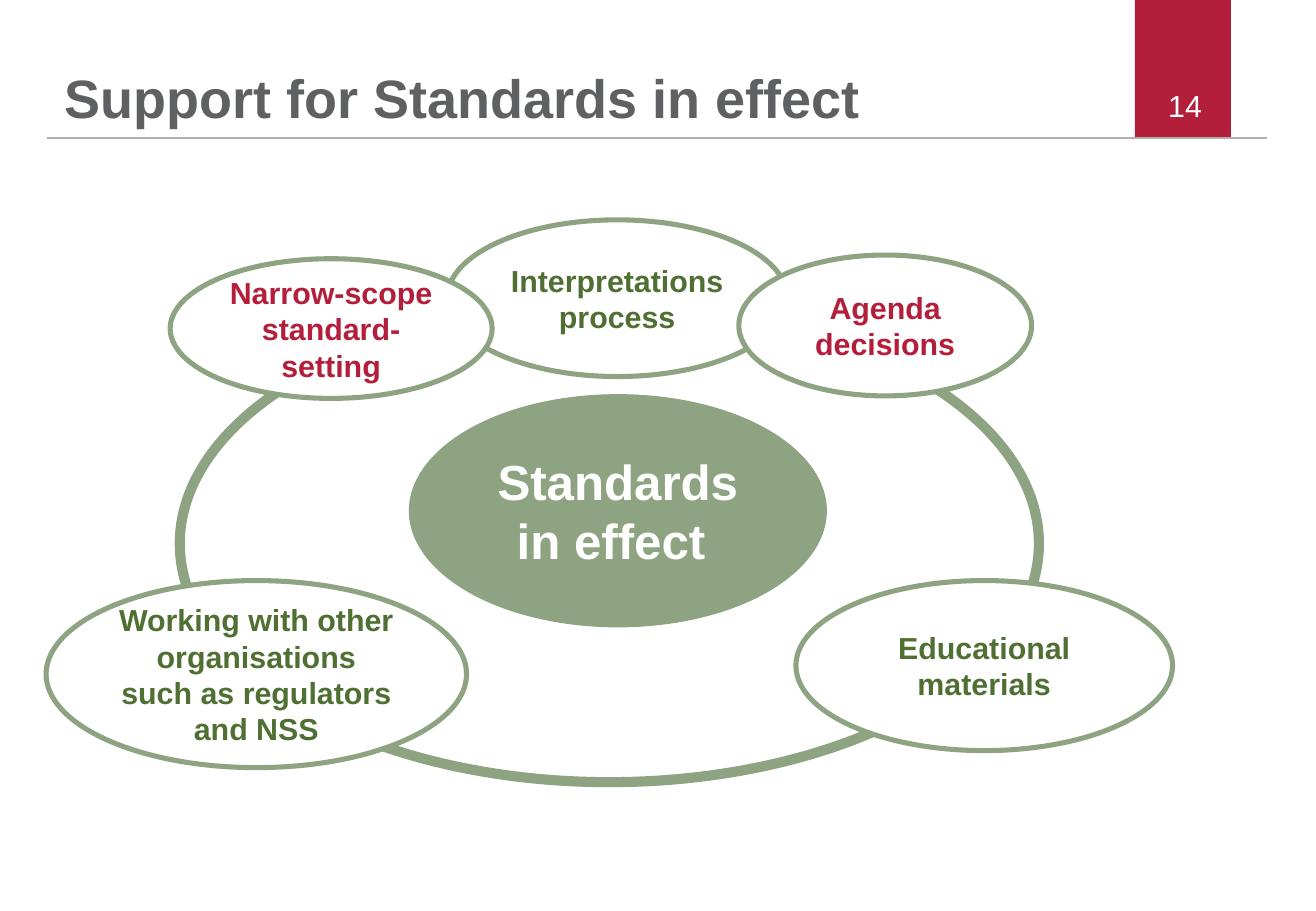
"""Build the slide on support for Standards in effect."""
import dataclasses

import pptx
import pptx.dml.color
import pptx.enum.shapes
import pptx.enum.text
import pptx.oxml
import pptx.util

Inches = pptx.util.Inches
Align = pptx.enum.text.PP_ALIGN
Anchor = pptx.enum.text.MSO_ANCHOR
Preset = pptx.enum.shapes.MSO_SHAPE


@dataclasses.dataclass(frozen=True)
class Theme:
    font: str = "Arial"
    red: str = "B31E3B"
    green: str = "4F7032"
    sage: str = "8DA381"
    white: str = "FFFFFF"
    grey: str = "5F6062"
    rule: str = "AFAFB0"
    title_size: float = 32
    centre_size: float = 29.2
    body_size: float = 18
    ring_width: float = 6
    outline_width: float = 3
    thin_width: float = 0.75
    rule_width: float = 1.2


THEME = Theme()

SUPPORT_ACTIVITIES = [
    ("Working with other organisations such as regulators and NSS",
     (0.38, 4.78, 3.46, 1.54), THEME.green),
    ("Educational materials", (6.55, 4.78, 3.1, 1.4), THEME.green),
    ("Interpretations process", (3.68, 1.81, 2.8, 1.29), THEME.green),
    ("Narrow-scope standard-setting", (1.4, 2.13, 2.65, 1.15), THEME.red),
    ("Agenda decisions", (6.08, 2.1, 2.41, 1.16), THEME.red),
]


def rgb(value):
    """Return a colour object for a hex value."""
    return pptx.dml.color.RGBColor.from_string(value)


def write_text(shape, text, size, color, bold=True, align=Align.CENTER,
               anchor=Anchor.MIDDLE, margins=(0.08, 0.04), line_spacing=None):
    """Put one formatted paragraph into a shape."""
    frame = shape.text_frame
    horizontal, vertical = map(Inches, margins)
    frame_format = {
        "word_wrap": True, "vertical_anchor": anchor,
        "margin_left": horizontal, "margin_right": horizontal,
        "margin_top": vertical, "margin_bottom": vertical,
    }
    for name, value in frame_format.items():
        setattr(frame, name, value)
    paragraph = frame.paragraphs[0]
    paragraph.alignment = align
    paragraph.line_spacing = line_spacing
    run = paragraph.add_run()
    run.text = text
    font_format = {"name": THEME.font, "size": pptx.util.Pt(size), "bold": bold}
    for name, value in font_format.items():
        setattr(run.font, name, value)
    run.font.color.rgb = rgb(color)


def add_label(shapes, box, text, size, color, **text_format):
    """Add a text box with one paragraph."""
    label = shapes.add_textbox(*map(Inches, box))
    write_text(label, text, size, color, **text_format)


def add_figure(shapes, preset, box, fill=None, line=None, width=0):
    """Add a preset shape with an optional fill and outline."""
    shape = shapes.add_shape(preset, *map(Inches, box))
    shape.shadow.inherit = False
    if fill:
        shape.fill.solid()
        shape.fill.fore_color.rgb = rgb(fill)
    else:
        shape.fill.background()
    if line:
        shape.line.color.rgb = rgb(line)
        shape.line.width = pptx.util.Pt(width)
    else:
        shape.line.fill.background()
    return shape


def add_rule(shapes, left, right, top):
    """Add the thin horizontal line under the title."""
    rule = shapes.add_connector(
        pptx.enum.shapes.MSO_CONNECTOR.STRAIGHT,
        Inches(left), Inches(top), Inches(right), Inches(top))
    rule.line.color.rgb = rgb(THEME.rule)
    rule.line.width = pptx.util.Pt(THEME.rule_width)
    properties = rule._element.spPr
    properties.append(pptx.oxml.parse_xml(
        '<a:effectLst xmlns:a="http://schemas.openxmlformats.org/drawingml/2006/main"/>'))


def add_header(shapes):
    """Add the page tab, the rule, the page number and the title."""
    add_figure(shapes, Preset.RECTANGLE, (9.34, 0, 0.79, 1.14), fill=THEME.red)
    add_rule(shapes, 0.39, 10.43, 1.14)
    add_label(shapes, (7.46, 0.67, 2.53, 0.4), "14", THEME.body_size, THEME.white,
              bold=False, align=Align.RIGHT, margins=(0.1, 0.05))
    add_label(shapes, (0.53, 0.36, 8.73, 0.71), "Support for Standards in effect",
              THEME.title_size, THEME.grey, align=Align.LEFT, anchor=Anchor.BOTTOM,
              margins=(0, 0), line_spacing=0.9)


def add_diagram(shapes):
    """Add the ring, its centre and the support activities around it."""
    add_figure(shapes, Preset.OVAL, (1.48, 2.51, 7.07, 3.93),
               line=THEME.sage, width=THEME.ring_width)
    centre = add_figure(shapes, Preset.OVAL, (3.37, 3.25, 3.43, 1.91),
                        fill=THEME.sage, line=THEME.sage, width=THEME.thin_width)
    write_text(centre, "Standards in effect ", THEME.centre_size, THEME.white)
    for text, box, color in SUPPORT_ACTIVITIES:
        activity = add_figure(shapes, Preset.OVAL, box, fill=THEME.white,
                              line=THEME.sage, width=THEME.outline_width)
        write_text(activity, text, THEME.body_size, color)


def main():
    """Build and save the presentation."""
    presentation = pptx.Presentation()
    presentation.slide_width = Inches(10.83)
    presentation.slide_height = Inches(7.5)
    slide = presentation.slides.add_slide(presentation.slide_layouts[6])
    add_header(slide.shapes)
    add_diagram(slide.shapes.add_group_shape().shapes)
    presentation.save("out.pptx")


if __name__ == "__main__":
    main()
